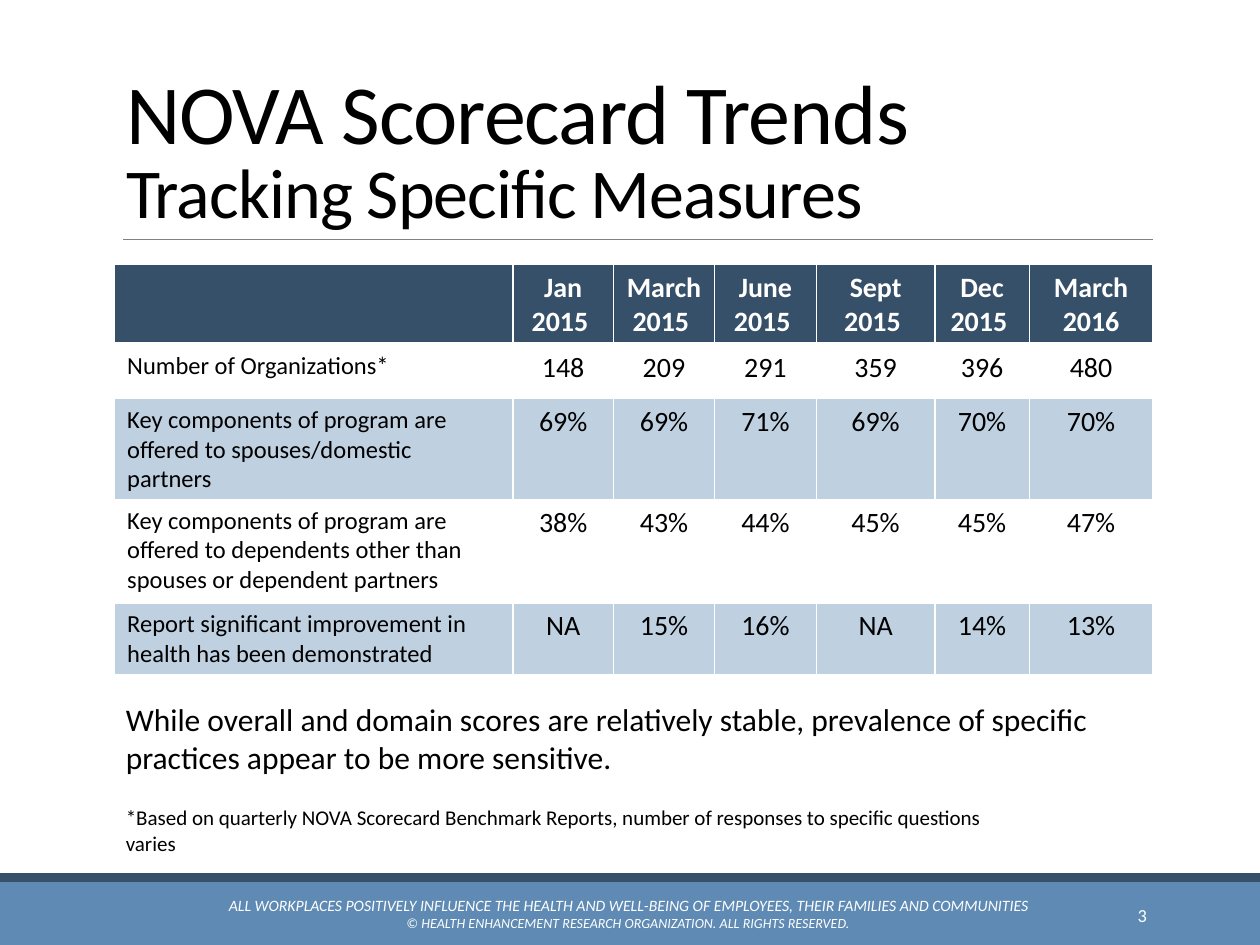
from dataclasses import dataclass

from lxml.etree import SubElement
from pptx import Presentation
from pptx.dml.color import RGBColor as RGB
from pptx.enum.shapes import MSO_CONNECTOR as Link, MSO_SHAPE as Shape
from pptx.enum.text import MSO_ANCHOR as Anchor, MSO_AUTO_SIZE as Fit, PP_ALIGN as Align
from pptx.oxml.ns import qn
from pptx.util import Inches, Pt


@dataclass(frozen=True)
class Theme:
    face: str = "Calibri"
    ink: str = "000000"
    white: str = "FFFFFF"
    navy: str = "365069"
    blue: str = "5E8AB4"
    band: str = "BFD0E1"
    rule: str = "808080"
    title: int = 48
    sub: int = 40
    body: int = 18
    cell: int = 16
    label: int = 14
    note: int = 12
    page: float = 10.5
    motto: int = 9
    rights: int = 8


T = Theme()

WIDTHS = [3.16, 0.8, 0.8, 0.81, 0.94, 0.75, 0.98]
HEIGHTS = [0.62, 0.43, 0.8, 0.82, 0.56]
ROWS = [
    ["", "Jan 2015 ", "March 2015 ", "June 2015 ", "Sept 2015 ", "Dec 2015 ", "March 2016"],
    ["Number of Organizations*", "148", "209", "291", "359", "396", "480"],
    ["Key components of program are offered to spouses/domestic partners",
     "69%", "69%", "71%", "69%", "70%", "70%"],
    ["Key components of program are offered to dependents other than spouses or dependent partners",
     "38%", "43%", "44%", "45%", "45%", "47%"],
    ["Report significant improvement in health has been demonstrated",
     "NA", "15%", "16%", "NA", "14%", "13%"],
]


def style(font, size, color=T.ink, bold=False, italic=False):
    font.name, font.size = T.face, Pt(size)
    font.bold, font.italic = bold, italic
    font.color.rgb = RGB.from_string(color)


def add_bar(slide, top, height, color):
    bar = slide.shapes.add_shape(Shape.RECTANGLE, 0, Inches(top), Inches(10), Inches(height))
    bar.shadow.inherit = False
    bar.fill.solid()
    bar.fill.fore_color.rgb = RGB.from_string(color)
    bar.line.fill.background()


def add_rule(slide, left, right, top):
    line = slide.shapes.add_connector(
        Link.STRAIGHT, Inches(left), Inches(top), Inches(right), Inches(top))
    line.line.color.rgb = RGB.from_string(T.rule)
    line.line.width = Pt(0.5)
    SubElement(line._element.spPr, qn("a:effectLst"))


def set_title(slide, *lines):
    """Fill the title with (text, size) lines, split by line breaks."""
    title = slide.shapes.title
    title.left, title.top = Inches(0.9), Inches(0.31)
    title.width, title.height = Inches(8.25), Inches(1.59)
    frame = title.text_frame
    frame.auto_size, frame.vertical_anchor = Fit.NONE, Anchor.BOTTOM
    para = frame.paragraphs[0]
    para.alignment, para.line_spacing = Align.LEFT, 0.85
    for i, (text, size) in enumerate(lines):
        if i:
            para.add_line_break()
        run = para.add_run()
        run.text = text
        style(run.font, size)
        run.font._element.set("spc", "-50")


def add_text(slide, box, lines, color=T.ink, align=Align.LEFT,
             anchor=Anchor.TOP, wrap=True, italic=False):
    """Add a text box with one paragraph for each (text, size)."""
    frame = slide.shapes.add_textbox(*map(Inches, box)).text_frame
    frame.word_wrap, frame.vertical_anchor = wrap, anchor
    for i, (text, size) in enumerate(lines):
        para = frame.add_paragraph() if i else frame.paragraphs[0]
        para.text, para.alignment = text, align
        style(para.font, size, color, italic=italic)


def add_edges(cell, base):
    props = cell._tc.get_or_add_tcPr()
    for side, width in (("L", 1), ("R", 1), ("T", 1), ("B", base)):
        edge = SubElement(props, qn(f"a:ln{side}"), w=str(Pt(width)))
        fill = SubElement(edge, qn("a:solidFill"))
        SubElement(fill, qn("a:srgbClr"), val=T.white)


def fill_cell(cell, text, row, col):
    head = row == 0
    add_edges(cell, 3 if head else 1)
    if head or row % 2 == 0:
        cell.fill.solid()
        cell.fill.fore_color.rgb = RGB.from_string(T.navy if head else T.band)
    else:
        cell.fill.background()
    cell.vertical_anchor = Anchor.MIDDLE if head else Anchor.TOP
    para = cell.text_frame.paragraphs[0]
    para.text = text
    para.alignment = Align.CENTER if col else Align.LEFT
    style(para.font, T.cell if col else T.label, T.white if head else T.ink, bold=head)


def add_grid(slide, left, top):
    table = slide.shapes.add_table(
        len(ROWS), len(WIDTHS), Inches(left), Inches(top),
        Inches(sum(WIDTHS)), Inches(sum(HEIGHTS))).table
    table.first_row = table.horz_banding = False
    for col, width in zip(table.columns, WIDTHS):
        col.width = Inches(width)
    for r, (height, texts) in enumerate(zip(HEIGHTS, ROWS)):
        table.rows[r].height = Inches(height)
        for c, text in enumerate(texts):
            fill_cell(table.cell(r, c), text, r, c)


def main():
    deck = Presentation()
    deck.slide_width, deck.slide_height = Inches(10), Inches(7.5)
    slide = deck.slides.add_slide(deck.slide_layouts[5])
    add_bar(slide, 7, 0.5, T.blue)
    add_bar(slide, 6.93, 0.07, T.navy)
    add_rule(slide, 0.98, 9.15, 1.9)
    set_title(slide, ("NOVA Scorecard Trends ", T.title),
              ("Tracking Specific Measures", T.sub))
    add_text(slide, (8.12, 7.06, 1.08, 0.4), [("3", T.page)],
             T.white, Align.RIGHT, Anchor.MIDDLE)
    add_text(slide, (1.39, 7.05, 7.22, 0.4), [
        ("ALL WORKPLACES POSITIVELY INFLUENCE THE HEALTH AND WELL-BEING OF EMPLOYEES, "
         "THEIR FAMILIES AND COMMUNITIES ", T.motto),
        ("© HEALTH ENHANCEMENT RESEARCH ORGANIZATION. ALL RIGHTS RESERVED. ", T.rights),
    ], T.white, Align.CENTER, Anchor.MIDDLE, italic=True)
    add_grid(slide, 0.91, 2.1)
    add_text(slide, (0.9, 6.34, 7.42, 0.3), [
        ("*Based on quarterly NOVA Scorecard Benchmark Reports, "
         "number of responses to specific questions varies", T.note)], wrap=False)
    add_text(slide, (0.9, 5.51, 8.25, 0.71), [
        ("While overall and domain scores are relatively stable, "
         "prevalence of specific practices appear to be more sensitive.", T.body)])
    deck.save("out.pptx")


if __name__ == "__main__":
    main()
